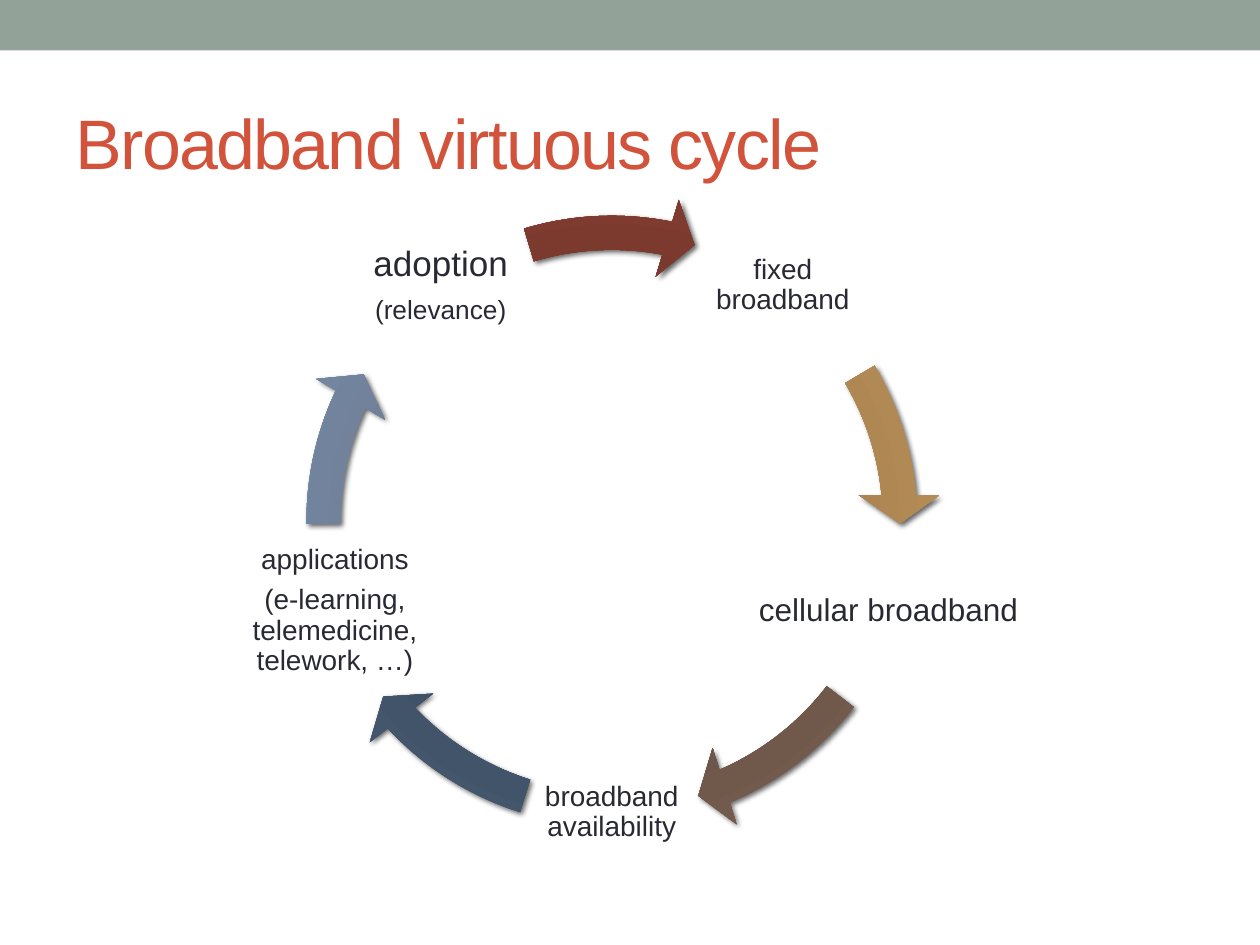
from dataclasses import dataclass
from math import cos, radians, sin

from lxml import etree
from pptx import Presentation
from pptx.dml.color import RGBColor
from pptx.enum.shapes import MSO_SHAPE
from pptx.enum.text import MSO_ANCHOR, PP_ALIGN
from pptx.oxml.ns import qn
from pptx.util import Inches, Pt

RECTANGLE = MSO_SHAPE.RECTANGLE
CIRCULAR_ARROW = MSO_SHAPE.CIRCULAR_ARROW
MIDDLE = MSO_ANCHOR.MIDDLE
LEFT, CENTER = PP_ALIGN.LEFT, PP_ALIGN.CENTER

COLUMNS, ROWS = 100, 75
FONT = "Arial"
INK, ACCENT, BAND = "292934", "D2533C", "93A299"
CENTER_COLUMN, CENTER_ROW = 48.55, 41.35
LABEL_RADIUS, RING_SIZE = 23.1, 52.1
LABEL_SIZE = 13.9
FIRST_ANGLE, STEP_ANGLE = -54, 72
SHAFT, HEAD_ANGLE, HEAD_WIDTH = 0.052, 5.6, 0.061
ANGLE_UNIT = 0.6
STOPS = (0, 34, 70, 100)


@dataclass
class Stage:
    lines: list[tuple[str, int]]
    arrow_start: float
    arrow_end: float
    shades: tuple[str, str, str, str]
    width: float = LABEL_SIZE
    inset: float = 0.02


STAGES = [
    Stage([("fixed broadband", 16)], 329.43, 354.9,
          ("A37D49", "A07C4C", "B38B55", "AD8F67")),
    Stage([("cellular broadband", 18)], 37.54, 66.93,
          ("685044", "665145", "725A4D", "726056"), width=22.7, inset=0.03),
    Stage([("broadband availability", 16)], 107.48, 136.86,
          ("3B4D61", "3C4D60", "43566B", "4C5A6A")),
    Stage([("applications", 16), ("(e-learning, telemedicine, telework, …)", 16)],
          179.5, 204.98, ("677790", "68788E", "74869F", "808DA0")),
    Stage([("adoption", 20), ("(relevance)", 15)], 253.3, 281.11,
          ("743327", "72352A", "7F3B2F", "79463D"), inset=0.03),
]


def color(value: str) -> RGBColor:
    return RGBColor.from_string(value)


def grid_box(column: float, row: float, columns: float, rows: float) -> list[int]:
    return [round(column / COLUMNS * deck.slide_width),
            round(row / ROWS * deck.slide_height),
            round(columns / COLUMNS * deck.slide_width),
            round(rows / ROWS * deck.slide_height)]


def centered_box(column: float, row: float, columns: float, rows: float) -> list[int]:
    return grid_box(column - columns / 2, row - rows / 2, columns, rows)


def style_run(run, size: float, tint: str) -> None:
    run.font.name = FONT
    run.font.size = Pt(size)
    run.font.color.rgb = color(tint)


def add_node(parent, tag: str, **attributes):
    return etree.SubElement(parent, qn(tag), {k: str(v) for k, v in attributes.items()})


def shade_radially(shape, shades: tuple[str, ...]) -> None:
    shape.fill.gradient()
    gradient = shape.element.spPr.find(qn("a:gradFill"))
    for child in list(gradient):
        gradient.remove(child)
    stops = add_node(gradient, "a:gsLst")
    for position, shade in zip(STOPS, shades):
        stop = add_node(stops, "a:gs", pos=position * 1000)
        add_node(stop, "a:srgbClr", val=shade)
    circle = add_node(gradient, "a:path", path="circle")
    add_node(circle, "a:fillToRect", l=100000, t=100000, r=100000, b=100000)


def cast_shadow(shape) -> None:
    shape.shadow.inherit = False
    effects = shape.element.spPr.find(qn("a:effectLst"))
    shadow = add_node(effects, "a:outerShdw", blurRad=Pt(3), dist=Pt(2),
                      dir=45 * 60000, rotWithShape=0)
    black = add_node(shadow, "a:srgbClr", val="000000")
    add_node(black, "a:alpha", val=60000)


def add_label(stage: Stage, angle: float) -> None:
    column = CENTER_COLUMN + LABEL_RADIUS * cos(radians(angle))
    row = CENTER_ROW + LABEL_RADIUS * sin(radians(angle))
    label = slide.shapes.add_textbox(*centered_box(column, row, stage.width, LABEL_SIZE))
    frame = label.text_frame
    frame.word_wrap = True
    frame.vertical_anchor = MIDDLE
    frame.margin_left = frame.margin_right = Inches(stage.inset)
    frame.margin_top = frame.margin_bottom = Inches(stage.inset)
    frame.text = "\n".join(text for text, _ in stage.lines)
    for paragraph, (_, size) in zip(frame.paragraphs, stage.lines):
        paragraph.alignment = CENTER
        paragraph.line_spacing = 0.9
        paragraph.space_after = Pt(0.35 * size)
        style_run(paragraph.runs[0], size, INK)


def add_arrow(stage: Stage) -> None:
    arrow = slide.shapes.add_shape(
        CIRCULAR_ARROW, *centered_box(CENTER_COLUMN, CENTER_ROW, RING_SIZE, RING_SIZE))
    angles = (HEAD_ANGLE, stage.arrow_end, stage.arrow_start)
    settings = (SHAFT, *(angle * ANGLE_UNIT for angle in angles), HEAD_WIDTH)
    for index, value in enumerate(settings):
        arrow.adjustments[index] = value
    shade_radially(arrow, stage.shades)
    arrow.line.fill.background()
    cast_shadow(arrow)


def add_band() -> None:
    band = slide.shapes.add_shape(RECTANGLE, *grid_box(0, 0, COLUMNS, 4))
    band.fill.solid()
    band.fill.fore_color.rgb = color(BAND)
    band.line.fill.background()
    band.shadow.inherit = False


def set_title(text: str) -> None:
    title = slide.shapes.title
    title.left, title.top, title.width, title.height = grid_box(5, 5.8, 90, 10.8)
    title.text_frame.text = text
    title.text_frame.vertical_anchor = MIDDLE
    paragraph = title.text_frame.paragraphs[0]
    paragraph.alignment = LEFT
    run = paragraph.runs[0]
    style_run(run, 40, ACCENT)
    run.font._element.set("spc", "-100")


deck = Presentation()
deck.slide_width, deck.slide_height = Inches(10), Inches(7.5)
slide = deck.slides.add_slide(deck.slide_layouts[5])
add_band()
set_title("Broadband virtuous cycle")
for position, stage in enumerate(STAGES):
    add_label(stage, FIRST_ANGLE + position * STEP_ANGLE)
    add_arrow(stage)
deck.save("out.pptx")
